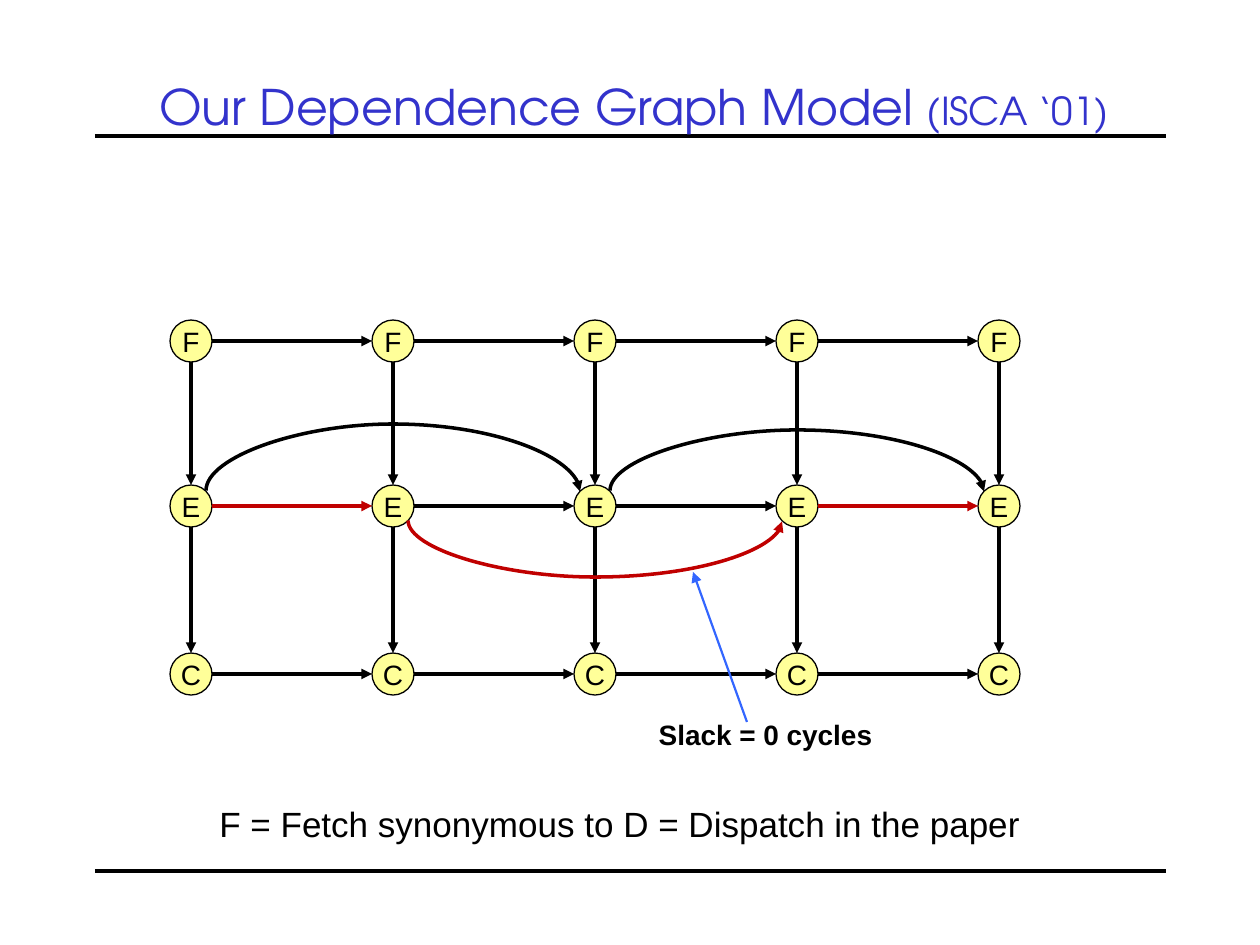
from lxml import etree
from pptx import Presentation
from pptx.dml.color import RGBColor
from pptx.enum.shapes import MSO_CONNECTOR, MSO_SHAPE
from pptx.enum.text import MSO_ANCHOR, PP_ALIGN
from pptx.oxml.ns import qn
from pptx.util import Pt

STRAIGHT, CURVE = MSO_CONNECTOR.STRAIGHT, MSO_CONNECTOR.CURVE
ELLIPSE = MSO_SHAPE.OVAL
MIDDLE, TOP = MSO_ANCHOR.MIDDLE, MSO_ANCHOR.TOP
CENTER, LEFT = PP_ALIGN.CENTER, PP_ALIGN.LEFT

BLACK = RGBColor(0x00, 0x00, 0x00)
CRITICAL_RED = RGBColor(0xC0, 0x00, 0x00)
POINTER_BLUE = RGBColor(0x33, 0x66, 0xFF)
TITLE_BLUE = RGBColor(0x33, 0x33, 0xCC)
NODE_YELLOW = RGBColor(0xFF, 0xFF, 0x99)
BODY_FONT, TITLE_FONT = "Arial", "TeX Gyre Adventor"

DIAMETER = 42
RADIUS = DIAMETER // 2
DIAGONAL = 15  # offset of a node's 45-degree point from its centre


def px(length):
    return round(length * 914400 / 126)


def add_run(paragraph, words, size, font=BODY_FONT, color=BLACK, bold=False):
    run = paragraph.add_run()
    run.text = words
    run.font.size, run.font.name, run.font.bold = Pt(size), font, bold
    run.font.color.rgb = color


def add_text(slide, box, align, anchor=TOP, wrap=True):
    """Add an empty text box and return its first paragraph."""
    frame = slide.shapes.add_textbox(*map(px, box)).text_frame
    frame.word_wrap, frame.vertical_anchor = wrap, anchor
    frame.paragraphs[0].alignment = align
    return frame.paragraphs[0]


def style_line(connector, color, width, arrow=True):
    connector.line.color.rgb = color
    connector.line.width = Pt(width)
    if arrow:
        etree.SubElement(connector.line._get_or_add_ln(), qn("a:tailEnd"), type="triangle")
    etree.SubElement(connector._element.spPr, qn("a:effectLst"))


def add_line(slide, start, end, color=BLACK, width=2, arrow=True):
    connector = slide.shapes.add_connector(STRAIGHT, *map(px, (*start, *end)))
    style_line(connector, color, width, arrow)


def add_arc(slide, start, span, depth, color=BLACK, below=False):
    """Curved arrow running right from start, bulging by depth above or below."""
    x, y = start
    # A one-px-wide upright connector is turned on its side around its centre,
    # so its adjustment counts the bulge in px.
    left, top = x + span / 2 - 0.5, y - span / 2
    arc = slide.shapes.add_connector(
        CURVE, *map(px, (left, top, left + 1, top + span)))
    xfrm = arc._element.spPr.find(qn("a:xfrm"))
    xfrm.set("rot", str((270 if below else 90) * 60000))
    xfrm.set("flipH" if below else "flipV", "1")
    adjustment = (depth if below else -depth) * 100000
    guides = arc._element.spPr.find(qn("a:prstGeom")).get_or_add_avLst()
    etree.SubElement(guides, qn("a:gd"), name="adj1", fmla=f"val {adjustment}")
    style_line(arc, color, 2)


def add_node(slide, center, letter):
    x, y = center
    node = slide.shapes.add_shape(
        ELLIPSE, *map(px, (x - RADIUS, y - RADIUS, DIAMETER, DIAMETER)))
    node.shadow.inherit = False
    node.fill.solid()
    node.fill.fore_color.rgb = NODE_YELLOW
    node.line.color.rgb = BLACK
    node.line.width = Pt(0.75)
    frame = node.text_frame
    frame.word_wrap, frame.vertical_anchor = False, MIDDLE
    frame.margin_left = frame.margin_right = frame.margin_top = frame.margin_bottom = 0
    frame.paragraphs[0].alignment = CENTER
    add_run(frame.paragraphs[0], letter, 16)


def draw_frame(slide, left, top, width, height):
    """Title between the page margins, with a rule below it and one at the foot."""
    for y in (top, top + height):
        add_line(slide, (left, y), (left + width, y), width=2.25, arrow=False)
    title = add_text(slide, (left + 10, top - 83, width - 13, 106), CENTER, MIDDLE)
    add_run(title, "Our Dependence Graph Model ", 28, TITLE_FONT, TITLE_BLUE)
    add_run(title, "(ISCA ‘01)", 22, TITLE_FONT, TITLE_BLUE)


def draw_graph(slide, left, top, width, height):
    """Grid of F, E and C nodes, one column per instruction."""
    columns = 5
    step = (width - DIAMETER) // (columns - 1)
    xs = [left + RADIUS + step * column for column in range(columns)]
    fetch, execute, commit = top + RADIUS, top + 186, top + height - RADIUS
    critical_steps = (0, 3)

    for letter, y in (("E", execute), ("F", fetch), ("C", commit)):
        for x in xs:
            add_node(slide, (x, y), letter)
        for column, (x, following) in enumerate(zip(xs, xs[1:])):
            critical = letter == "E" and column in critical_steps
            add_line(slide, (x + RADIUS, y), (following - RADIUS, y),
                     CRITICAL_RED if critical else BLACK)
    for x in xs:
        for upper, lower in ((fetch, execute), (execute, commit)):
            add_line(slide, (x, upper + RADIUS), (x, lower - RADIUS))

    span = 2 * step - 2 * DIAGONAL
    for column, depth in ((0, 67), (2, 61)):
        add_arc(slide, (xs[column] + DIAGONAL, execute - DIAGONAL), span, depth)
    add_arc(slide, (xs[1] + DIAGONAL, execute + DIAGONAL), span, 57,
            CRITICAL_RED, below=True)


def draw_slack_note(slide, left, top, width, height):
    add_line(slide, (left + 103, top + 11), (left + 49, top - 139), POINTER_BLUE, 1.25)
    note = add_text(slide, (left, top, width, height), CENTER)
    add_run(note, "Slack = 0 cycles", 16, bold=True)


def draw_legend(slide, left, top, width, height):
    legend = add_text(slide, (left, top, width, height), LEFT, wrap=False)
    add_run(legend, "F = Fetch synonymous to D = Dispatch in the paper", 20)


def main():
    deck = Presentation()
    deck.slide_width, deck.slide_height = px(1260), px(945)
    slide = deck.slides.add_slide(deck.slide_layouts[6])
    draw_frame(slide, 95, 136, 1071, 735)
    draw_graph(slide, 170, 320, 850, 375)
    draw_slack_note(slide, 644, 711, 243, 47)
    draw_legend(slide, 207, 796, 832, 55)
    deck.save("out.pptx")


if __name__ == "__main__":
    main()
